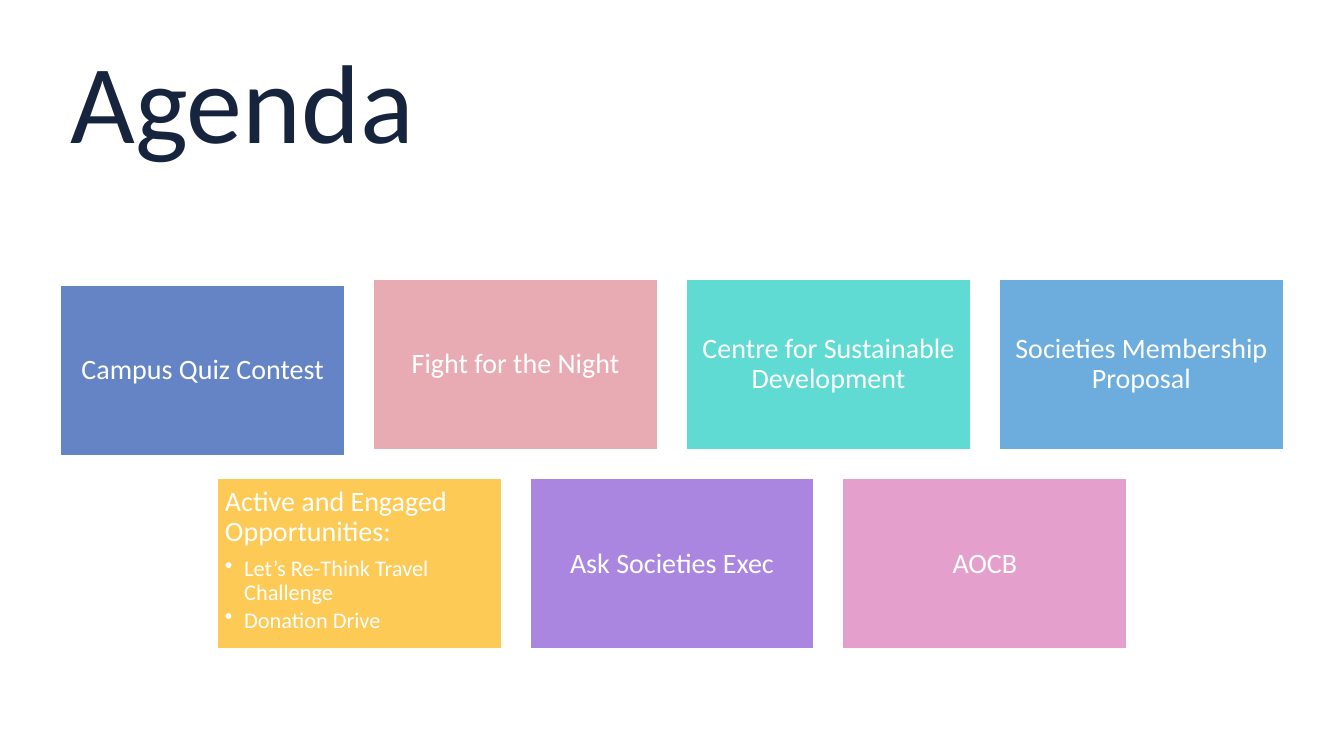
from lxml import etree
from pptx import Presentation
from pptx import util as u
from pptx.dml.color import RGBColor
from pptx.enum import shapes, text
from pptx.oxml import ns

COLORS = {
    "navy": "17243E", "white": "FFFFFF", "blue": "6484C6", "rose": "E8ABB4",
    "teal": "5FDBD3", "sky": "6CADDD", "amber": "FDCA55", "purple": "AA86E1",
    "pink": "E59FCC",
}
LEFT, CONTENT_WIDTH = 0.6, 12.13
CARD_WIDTH, CARD_HEIGHT = 2.82, 1.69
PITCH = (CONTENT_WIDTH - CARD_WIDTH) / 3
TOP_ROW, BOTTOM_ROW = 2.77, 4.75
FIRST_CARD_DROP = 0.06

CARDS = [
    (0, TOP_ROW + FIRST_CARD_DROP, "blue", "Campus Quiz Contest", []),
    (1, TOP_ROW, "rose", "Fight for the Night", []),
    (2, TOP_ROW, "teal", "Centre for Sustainable Development", []),
    (3, TOP_ROW, "sky", "Societies Membership Proposal", []),
    (0.5, BOTTOM_ROW, "amber", "Active and Engaged Opportunities:",
     ["Let’s Re-Think Travel Challenge", "Donation Drive"]),
    (1.5, BOTTOM_ROW, "purple", "Ask Societies Exec", []),
    (2.5, BOTTOM_ROW, "pink", "AOCB", []),
]


def color(name):
    return RGBColor.from_string(COLORS[name])


def write(paragraph, words, size, color_name):
    paragraph.line_spacing = 0.9
    run = paragraph.add_run()
    run.text = words
    run.font.name = "Calibri"
    run.font.size = u.Pt(size)
    run.font.color.rgb = color(color_name)


presentation = Presentation()
presentation.slide_width = u.Inches(13.33)
presentation.slide_height = u.Inches(7.5)
slide = presentation.slides.add_slide(presentation.slide_layouts[6])

title = slide.shapes.add_textbox(
    u.Inches(LEFT), u.Inches(0.34), u.Inches(CONTENT_WIDTH), u.Inches(1.45))
title.text_frame.word_wrap = True
title.text_frame.vertical_anchor = text.MSO_ANCHOR.MIDDLE
write(title.text_frame.paragraphs[0], "Agenda", 80, "navy")

for column, top, fill, heading, bullets in CARDS:
    card = slide.shapes.add_shape(
        shapes.MSO_SHAPE.RECTANGLE, u.Inches(LEFT + column * PITCH),
        u.Inches(top), u.Inches(CARD_WIDTH), u.Inches(CARD_HEIGHT))
    card.shadow.inherit = False
    card.fill.solid()
    card.fill.fore_color.rgb = color(fill)
    card.line.color.rgb = color("white")
    card.line.width = u.Pt(1)

    frame = card.text_frame
    frame.word_wrap = True
    frame.margin_left = frame.margin_right = u.Inches(0.08)
    frame.margin_top = frame.margin_bottom = u.Inches(0.08)
    frame.vertical_anchor = text.MSO_ANCHOR.TOP if bullets else text.MSO_ANCHOR.MIDDLE
    paragraph = frame.paragraphs[0]
    paragraph.alignment = text.PP_ALIGN.LEFT if bullets else text.PP_ALIGN.CENTER
    if bullets:
        paragraph.space_after = u.Pt(7)
    write(paragraph, heading, 20, "white")

    for bullet in bullets:
        paragraph = frame.add_paragraph()
        paragraph.level = 1
        paragraph.alignment = text.PP_ALIGN.LEFT
        paragraph.line_spacing = 0.9
        paragraph.space_after = u.Pt(2.4)
        properties = paragraph._p.get_or_add_pPr()
        properties.set("marL", str(u.Inches(0.19)))
        properties.set("indent", str(u.Inches(-0.19)))
        etree.SubElement(properties, ns.qn("a:buChar")).set("char", "•")
        write(paragraph, bullet, 16, "white")

presentation.save("out.pptx")
